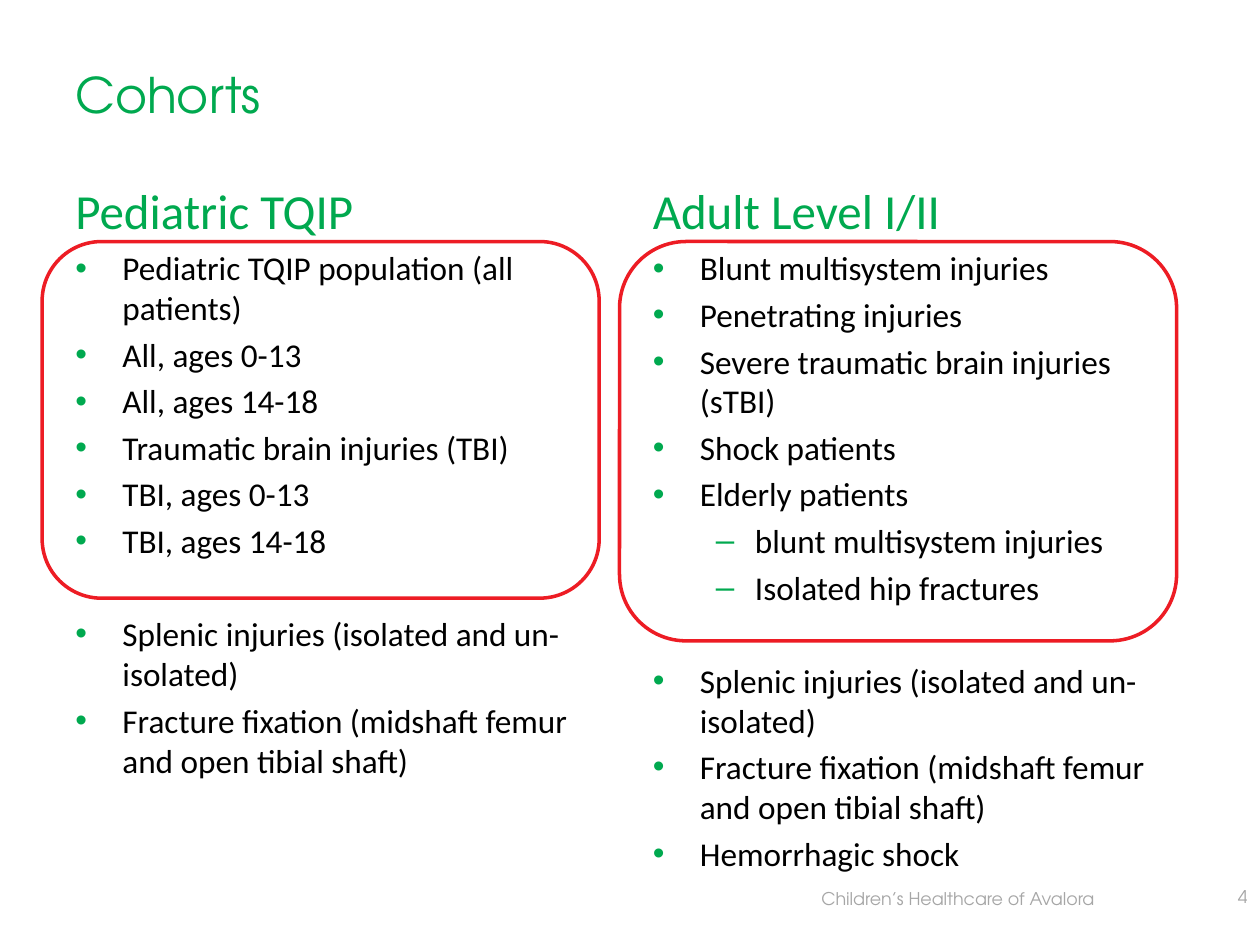
from dataclasses import dataclass

from lxml import etree
from pptx import Presentation
from pptx.dml.color import RGBColor
from pptx.enum.shapes import MSO_SHAPE
from pptx.enum.text import MSO_ANCHOR, PP_ALIGN
from pptx.oxml.ns import qn
from pptx.util import Cm, Pt

ROUND = MSO_SHAPE.ROUNDED_RECTANGLE
TOP, BOTTOM = MSO_ANCHOR.TOP, MSO_ANCHOR.BOTTOM
RIGHT = PP_ALIGN.RIGHT


@dataclass(frozen=True)
class Theme:
    green: str = "00A94F"
    red: str = "ED1C24"
    black: str = "000000"
    grey: str = "A6A6A6"
    head: str = "TeX Gyre Adventor"
    body: str = "Calibri"
    big: float = 28
    mid: float = 19
    small: float = 10
    gap: float = 3.8
    split: float = 30.5


THEME = Theme()
# Per level: bullet sign, left margin, hanging indent
LEVELS = [("•", Cm(0.95), Cm(-0.95)), ("–", Cm(2.06), Cm(-0.79))]


def add_text(x, y, w, h, text, face, size, color, anchor=TOP, wrap=True):
    """Add a text box and return its frame; text may hold several lines."""
    frame = slide.shapes.add_textbox(Cm(x), Cm(y), Cm(w), Cm(h)).text_frame
    frame.word_wrap = wrap
    frame.vertical_anchor = anchor
    frame.text = text
    for para in frame.paragraphs:
        para.font.name = face
        para.font.size = Pt(size)
        para.font.color.rgb = RGBColor.from_string(color)
    return frame


def add_bullet(para, level):
    sign, left, hang = LEVELS[level]
    para.level = level
    props = para._p.get_or_add_pPr()
    props.set("marL", str(left))
    props.set("indent", str(hang))
    tint = etree.SubElement(props, qn("a:buClr"))
    etree.SubElement(tint, qn("a:srgbClr"), val=THEME.green)
    etree.SubElement(props, qn("a:buFont"), typeface="Arial")
    etree.SubElement(props, qn("a:buChar"), char=sign)


deck = Presentation()
deck.slide_width, deck.slide_height = Cm(25.4), Cm(19.05)
slide = deck.slides.add_slide(deck.slide_layouts[6])

add_text(1.27, 0.41, 22.86, 2.21, "Cohorts", THEME.head, THEME.big,
         THEME.green, BOTTOM)

# Each item is (level, text); the second group stands below the red frame
shared = [
    (0, "Splenic injuries (isolated and un-isolated)"),
    (0, "Fracture fixation (midshaft femur and open tibial shaft)"),
]
columns = [
    ("Pediatric TQIP", 7.19, [
        (0, "Pediatric TQIP population (all patients)"),
        (0, "All, ages 0-13"),
        (0, "All, ages 14-18"),
        (0, "Traumatic brain injuries (TBI)"),
        (0, "TBI, ages 0-13"),
        (0, "TBI, ages 14-18"),
    ], shared),
    ("Adult Level I/II", 8.05, [
        (0, "Blunt multisystem injuries"),
        (0, "Penetrating injuries"),
        (0, "Severe traumatic brain injuries (sTBI)"),
        (0, "Shock patients"),
        (0, "Elderly patients"),
        (1, "blunt multisystem injuries"),
        (1, "Isolated hip fractures"),
    ], shared + [(0, "Hemorrhagic shock")]),
]

top, width = 4.87, 11.23
for col, (name, tall, framed, below) in enumerate(columns):
    left = 1.27 + col * 11.64
    add_text(left, 3.18, width, 1.78, name, THEME.body, THEME.big,
             THEME.green, BOTTOM)

    box = slide.shapes.add_textbox(Cm(left), Cm(top), Cm(width), Cm(12.5))
    frame = box.text_frame
    frame.word_wrap = True
    for row, (level, text) in enumerate(framed + below):
        para = frame.add_paragraph() if row else frame.paragraphs[0]
        para.text = text
        add_bullet(para, level)
        if row:
            space = THEME.split if row == len(framed) else THEME.gap
            para.space_before = Pt(space)
        para.font.name = THEME.body
        para.font.size = Pt(THEME.mid)
        para.font.color.rgb = RGBColor.from_string(THEME.black)

    ring = slide.shapes.add_shape(ROUND, Cm(left - 0.42), Cm(top),
                                  Cm(width), Cm(tall))
    ring.shadow.inherit = False
    ring.fill.background()
    ring.line.color.rgb = RGBColor.from_string(THEME.red)
    ring.line.width = Pt(2)

add_text(16.31, 17.78, 6.07, 0.69, "Children’s Healthcare of Avalora",
         THEME.head, THEME.small, THEME.grey, wrap=False)
page = add_text(23.29, 17.73, 2.11, 0.69, "4", THEME.head, THEME.small,
                THEME.grey)
page.paragraphs[0].alignment = RIGHT

deck.save("out.pptx")
